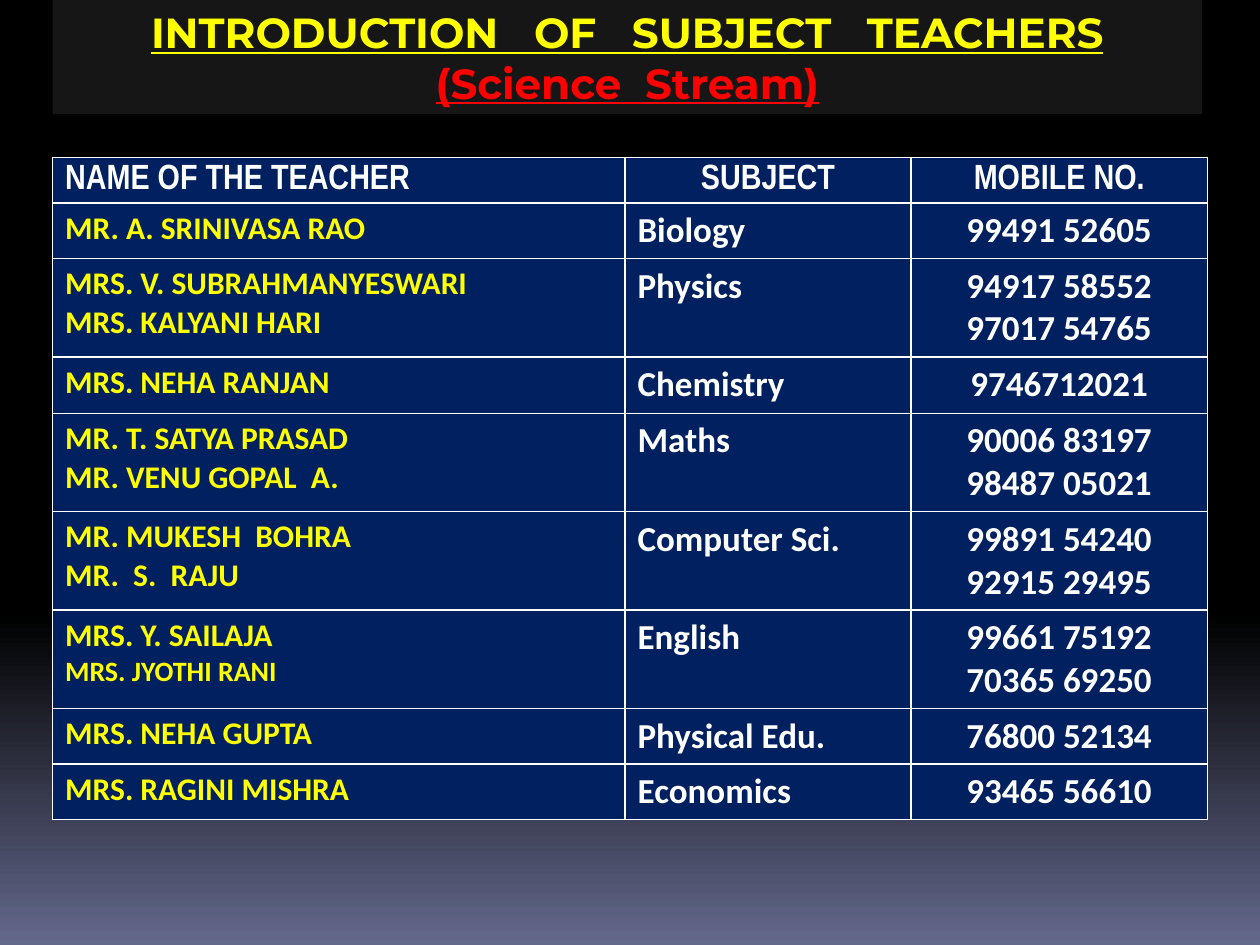
from dataclasses import dataclass

from lxml import etree
from pptx import Presentation
from pptx.dml.color import RGBColor
from pptx.enum.shapes import MSO_SHAPE
from pptx.enum.text import MSO_ANCHOR, PP_ALIGN
from pptx.oxml.ns import qn
from pptx.util import Cm, Pt

RECTANGLE = MSO_SHAPE.RECTANGLE
MIDDLE = MSO_ANCHOR.MIDDLE
LEFT, CENTER = PP_ALIGN.LEFT, PP_ALIGN.CENTER


@dataclass(frozen=True)
class Theme:
    black: str = "000000"
    dusk: str = "64688B"
    banner: str = "161616"
    navy: str = "002060"
    white: str = "FFFFFF"
    yellow: str = "FFFF00"
    red: str = "FF0000"
    title_font: str = "Montserrat"
    header_font: str = "Arial Narrow"
    body_font: str = "Calibri"
    title_size: int = 24
    large_size: int = 20
    name_size: int = 18
    small_name_size: int = 16
    border_width: int = 1


THEME = Theme()
MARGIN_LEFT = 1.06
COLUMN_WIDTHS = (11.54, 5.77, 5.97)
ROW_HEIGHTS = (0.91, 0.86, 1.52, 1.14, 1.52, 1.52, 0.94, 0.86, 0.91)
TABLE_HEIGHT = 13.34
HEADERS = ("NAME OF THE TEACHER", "SUBJECT", "MOBILE NO.")
SMALL_NAMES = ("MRS. JYOTHI RANI",)
TEACHERS = (
    (("MR. A. SRINIVASA RAO",), "Biology", ("99491 52605",)),
    (("MRS. V. SUBRAHMANYESWARI", "MRS. KALYANI HARI"), "Physics",
     ("94917 58552", "97017 54765")),
    (("MRS. NEHA RANJAN",), "Chemistry", ("9746712021",)),
    (("MR. T. SATYA PRASAD", "MR. VENU GOPAL  A."), "Maths",
     ("90006 83197", "98487 05021")),
    (("MR. MUKESH  BOHRA", "MR.  S.  RAJU"), "Computer Sci.",
     ("99891 54240", "92915 29495")),
    (("MRS. Y. SAILAJA", "MRS. JYOTHI RANI"), "English",
     ("99661 75192", "70365 69250")),
    (("MRS. NEHA GUPTA",), "Physical Edu.", ("76800 52134",)),
    (("MRS. RAGINI MISHRA",), "Economics", ("93465 56610",)),
)


def rgb(color):
    return RGBColor.from_string(color)


def add_line(frame, index, words, font, size, color, align=LEFT, underline=None):
    line = frame.paragraphs[0] if index == 0 else frame.add_paragraph()
    line.alignment = align
    run = line.add_run()
    run.text = words
    run.font.name = font
    run.font.size = Pt(size)
    run.font.bold = True
    run.font.underline = underline
    run.font.color.rgb = rgb(color)


def paint_background(slide):
    fill = slide.background.fill
    fill.gradient()
    fill.gradient_angle = 270
    stops = zip(fill.gradient_stops, (0.65, 1), (THEME.black, THEME.dusk))
    for stop, position, color in stops:
        stop.position = position
        stop.color.rgb = rgb(color)


def add_banner(slide):
    banner = slide.shapes.add_shape(
        RECTANGLE, Cm(MARGIN_LEFT), Cm(0), Cm(23.17), Cm(2.3))
    banner.shadow.inherit = False
    banner.fill.solid()
    banner.fill.fore_color.rgb = rgb(THEME.banner)
    banner.line.fill.background()
    frame = banner.text_frame
    frame.word_wrap = True
    frame.vertical_anchor = MIDDLE
    titles = (("INTRODUCTION   OF   SUBJECT   TEACHERS", THEME.yellow),
              ("(Science  Stream)", THEME.red))
    for index, (words, color) in enumerate(titles):
        add_line(frame, index, words, THEME.title_font, THEME.title_size,
                 color, CENTER, underline=True)


def style_cell(cell):
    properties = cell._tc.get_or_add_tcPr()
    for side in ("a:lnL", "a:lnR", "a:lnT", "a:lnB"):
        border = etree.SubElement(properties, qn(side), w=str(Pt(THEME.border_width)))
        solid = etree.SubElement(border, qn("a:solidFill"))
        etree.SubElement(solid, qn("a:srgbClr"), val=THEME.white)
    cell.fill.solid()
    cell.fill.fore_color.rgb = rgb(THEME.navy)


def fill_header(cells):
    for cell, words, align in zip(cells, HEADERS, (LEFT, CENTER, CENTER)):
        style_cell(cell)
        add_line(cell.text_frame, 0, words, THEME.header_font,
                 THEME.large_size, THEME.white, align)


def fill_teacher_row(cells, names, subject, mobiles):
    for cell in cells:
        style_cell(cell)
    name_cell, subject_cell, mobile_cell = cells
    for index, name in enumerate(names):
        size = THEME.small_name_size if name in SMALL_NAMES else THEME.name_size
        add_line(name_cell.text_frame, index, name, THEME.body_font, size, THEME.yellow)
    add_line(subject_cell.text_frame, 0, subject, THEME.body_font,
             THEME.large_size, THEME.white)
    for index, mobile in enumerate(mobiles):
        add_line(mobile_cell.text_frame, index, mobile, THEME.body_font,
                 THEME.large_size, THEME.white, CENTER)


def add_teacher_table(slide):
    table = slide.shapes.add_table(
        len(ROW_HEIGHTS), len(COLUMN_WIDTHS), Cm(MARGIN_LEFT), Cm(3.17),
        Cm(sum(COLUMN_WIDTHS)), Cm(TABLE_HEIGHT)).table
    for column, width in zip(table.columns, COLUMN_WIDTHS):
        column.width = Cm(width)
    for row, height in zip(table.rows, ROW_HEIGHTS):
        row.height = Cm(height)
    header, *teacher_rows = table.rows
    fill_header(header.cells)
    for row, teacher in zip(teacher_rows, TEACHERS):
        fill_teacher_row(row.cells, *teacher)


def main():
    deck = Presentation()
    deck.slide_width, deck.slide_height = Cm(25.4), Cm(19.05)
    slide = deck.slides.add_slide(deck.slide_layouts[6])
    paint_background(slide)
    add_banner(slide)
    add_teacher_table(slide)
    deck.save("out.pptx")


if __name__ == "__main__":
    main()
